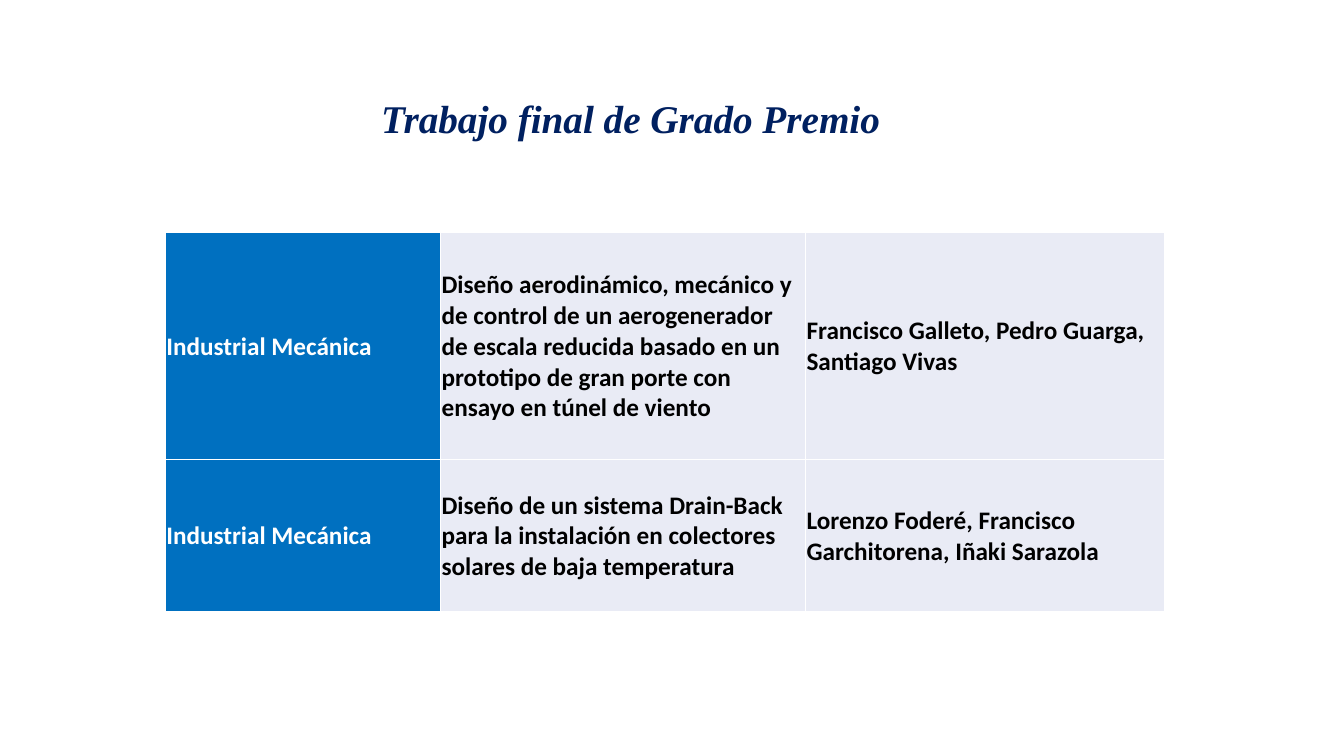
from lxml import etree
from pptx import Presentation
from pptx import util as u
from pptx.dml import color
from pptx.enum import text
from pptx.oxml import ns

COLORS = {
    "title": "002060",
    "degree": "0070C0",
    "detail": "E9EBF5",
    "white": "FFFFFF",
    "black": "000000",
}
PROJECTS = [
    ("Industrial Mecánica",
     "Diseño aerodinámico, mecánico y de control de un aerogenerador de escala "
     "reducida basado en un prototipo de gran porte con ensayo en túnel de viento",
     "Francisco Galleto, Pedro Guarga, Santiago Vivas"),
    ("Industrial Mecánica",
     "Diseño de un sistema Drain-Back para la instalación en colectores solares "
     "de baja temperatura",
     "Lorenzo Foderé, Francisco Garchitorena, Iñaki Sarazola"),
]
COLUMN_WIDTHS = [2.73, 3.62, 3.56]
ROW_HEIGHTS = [2.25, 1.51]


class AwardSlide:
    title_font = "Times New Roman"
    table_font = "Calibri"

    def __init__(self, presentation):
        self.slide = presentation.slides.add_slide(presentation.slide_layouts[5])

    def add_run(self, paragraph, content, font, size, fill, italic=False):
        run = paragraph.add_run()
        run.text = content
        run.font.name = font
        run.font.size = u.Pt(size)
        run.font.bold = True
        run.font.italic = italic
        run.font.color.rgb = color.RGBColor.from_string(COLORS[fill])

    def add_title(self, content, left, top, width, height):
        shape = self.slide.shapes.title
        shape.left, shape.top = u.Inches(left), u.Inches(top)
        shape.width, shape.height = u.Inches(width), u.Inches(height)
        frame = shape.text_frame
        frame.word_wrap = True
        frame.auto_size = text.MSO_AUTO_SIZE.NONE
        frame.vertical_anchor = text.MSO_ANCHOR.TOP
        paragraph = frame.paragraphs[0]
        paragraph.alignment = text.PP_ALIGN.LEFT
        self.add_run(paragraph, content, self.title_font, 28, "title", italic=True)

    def add_borders(self, cell):
        properties = cell._tc.get_or_add_tcPr()
        for side in ("lnL", "lnR", "lnT", "lnB"):
            line = etree.SubElement(properties, ns.qn(f"a:{side}"), w=str(u.Pt(1)))
            fill = etree.SubElement(line, ns.qn("a:solidFill"))
            etree.SubElement(fill, ns.qn("a:srgbClr"), val=COLORS["white"])

    def fill_cell(self, cell, content, background, foreground):
        self.add_borders(cell)
        cell.fill.solid()
        cell.fill.fore_color.rgb = color.RGBColor.from_string(COLORS[background])
        cell.margin_left = cell.margin_right = cell.margin_top = u.Inches(0.01)
        cell.margin_bottom = 0
        cell.vertical_anchor = text.MSO_ANCHOR.MIDDLE
        paragraph = cell.text_frame.paragraphs[0]
        self.add_run(paragraph, content, self.table_font, 18, foreground)

    def add_table(self, rows, left, top, widths, heights):
        table = self.slide.shapes.add_table(
            len(rows), len(widths), u.Inches(left), u.Inches(top),
            u.Inches(sum(widths)), u.Inches(sum(heights))).table
        table.first_row = table.horz_banding = False
        for column, width in zip(table.columns, widths):
            column.width = u.Inches(width)
        for row, height, contents in zip(table.rows, heights, rows):
            row.height = u.Inches(height)
            for index, (cell, content) in enumerate(zip(row.cells, contents)):
                style = ("detail", "black") if index else ("degree", "white")
                self.fill_cell(cell, content, *style)


def main():
    presentation = Presentation()
    presentation.slide_width = u.Inches(13.33)
    presentation.slide_height = u.Inches(7.5)
    award = AwardSlide(presentation)
    # Heading
    award.add_title("Trabajo final de Grado Premio", 3.68, 0.89, 6.67, 0.57)
    # Degree, project and authors
    award.add_table(PROJECTS, 1.64, 2.31, COLUMN_WIDTHS, ROW_HEIGHTS)
    presentation.save("out.pptx")


if __name__ == "__main__":
    main()
